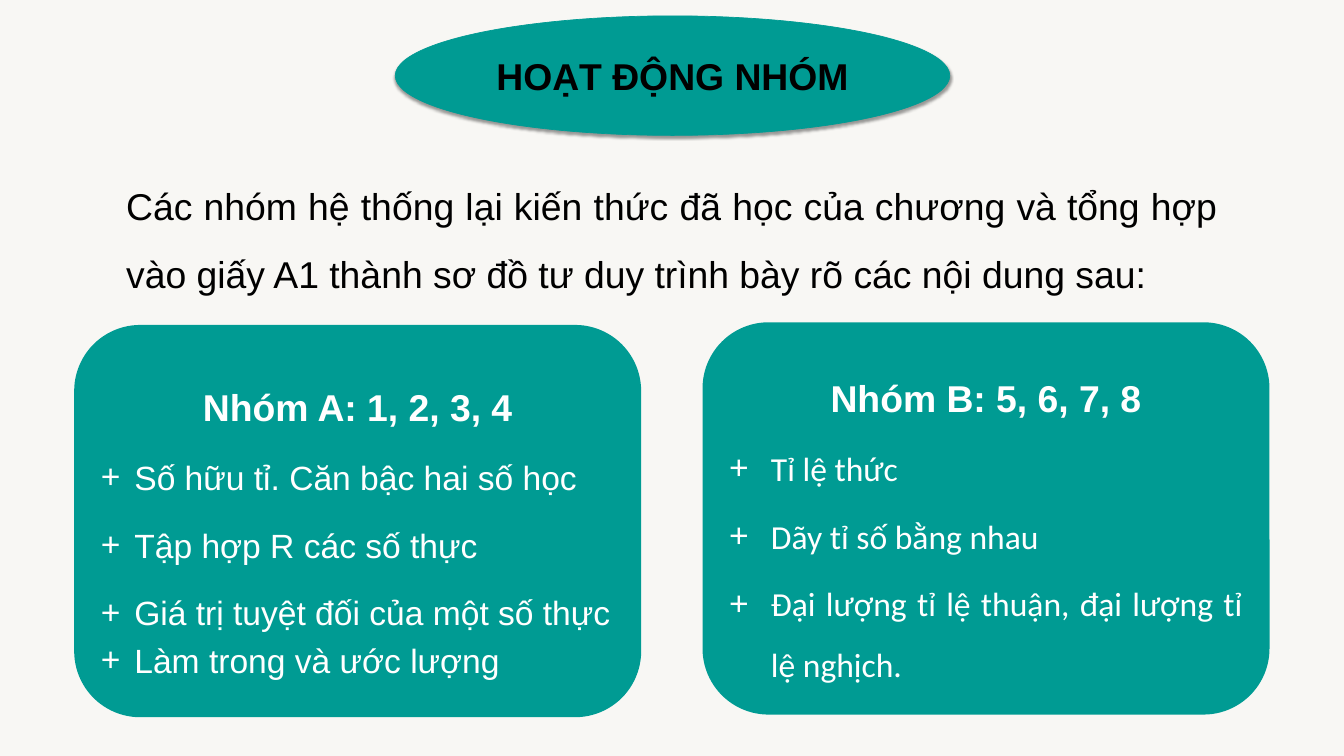
from lxml.etree import SubElement
from pptx import Presentation
from pptx.dml.color import RGBColor
from pptx.enum.shapes import MSO_SHAPE
from pptx.enum.text import MSO_ANCHOR, MSO_AUTO_SIZE, PP_ALIGN
from pptx.oxml.ns import qn
from pptx.util import Cm, Pt

TEAL = "009B93"
BLACK = "000000"
WHITE = "FFFFFF"
PAPER = "F8F7F4"


def color(value):
    """Turn a hex string into a colour."""
    return RGBColor.from_string(value)


def add_panel(page, kind, box, line_width):
    """Add a teal shape with middle-anchored text."""
    panel = page.shapes.add_shape(kind, *[Cm(length) for length in box])
    panel.shadow.inherit = False
    panel.fill.solid()
    panel.fill.fore_color.rgb = color(TEAL)
    panel.line.color.rgb = color(TEAL)
    panel.line.width = Pt(line_width)
    panel.text_frame.word_wrap = True
    panel.text_frame.vertical_anchor = MSO_ANCHOR.MIDDLE
    return panel


def add_shadow(shape):
    """Give a shape a soft shadow straight below it."""
    effects = shape._element.spPr.find(qn("a:effectLst"))
    shadow = SubElement(effects, qn("a:outerShdw"), blurRad="40000",
                        dist="20000", dir="5400000", rotWithShape="0")
    shade = SubElement(shadow, qn("a:srgbClr"), val=BLACK)
    SubElement(shade, qn("a:alpha"), val="38000")


def write(para, text, size, ink, align, font="Arial", bold=False):
    """Fill a paragraph with text in one style."""
    para.text = text
    para.alignment = align
    para.font.name = font
    para.font.size = Pt(size)
    para.font.bold = bold
    para.font.color.rgb = color(ink)


def space_out(para, after):
    """Set one-and-a-half line spacing and the gap below."""
    para.line_spacing = 1.5
    para.space_after = Pt(after)


def add_plus(para, indent):
    """Give a paragraph a hanging plus sign."""
    props = para._p.get_or_add_pPr()
    props.set("marL", str(Cm(indent)))
    props.set("indent", str(-Cm(indent)))
    SubElement(props, qn("a:buFont"), typeface="Arial")
    SubElement(props, qn("a:buChar"), char="+")


def add_title(page, box):
    """Place the title ellipse."""
    title = add_panel(page, MSO_SHAPE.OVAL, box, 0.75)
    add_shadow(title)
    write(title.text_frame.paragraphs[0], "HOẠT ĐỘNG NHÓM", 40, BLACK,
          PP_ALIGN.CENTER, bold=True)


def add_task(page, box, text):
    """Place the task sentence."""
    frame = page.shapes.add_textbox(*[Cm(length) for length in box]).text_frame
    frame.word_wrap = True
    frame.auto_size = MSO_AUTO_SIZE.SHAPE_TO_FIT_TEXT
    para = frame.paragraphs[0]
    space_out(para, 0)
    write(para, text, 40, BLACK, PP_ALIGN.JUSTIFY)


def add_group(page, box, heading, topics, font, indent, closing=None):
    """Place a group card: heading, spaced topics and a tight closing topic."""
    frame = add_panel(page, MSO_SHAPE.ROUNDED_RECTANGLE, box, 2).text_frame
    para = frame.paragraphs[0]
    space_out(para, 8)
    write(para, heading, 40, WHITE, PP_ALIGN.CENTER, bold=True)
    for topic in topics:
        para = frame.add_paragraph()
        space_out(para, 8)
        add_plus(para, indent)
        write(para, topic, 36, WHITE, PP_ALIGN.JUSTIFY, font)
    if closing:
        para = frame.add_paragraph()
        add_plus(para, indent)
        write(para, closing, 36, WHITE, PP_ALIGN.LEFT, font)


def main():
    """Build and save the slide."""
    deck = Presentation()
    deck.slide_width, deck.slide_height = Cm(50.8), Cm(28.58)
    page = deck.slides.add_slide(deck.slide_layouts[6])
    page.background.fill.solid()
    page.background.fill.fore_color.rgb = color(PAPER)

    add_title(page, (14.94, 0.6, 20.96, 4.52))
    add_task(page, (4.52, 5.97, 41.73, 5.08),
             "Các nhóm hệ thống lại kiến thức đã học của chương và tổng hợp "
             "vào giấy A1 thành sơ đồ tư duy trình bày rõ các nội dung sau:")
    add_group(page, (2.84, 12.32, 21.36, 14.76), "Nhóm A: 1, 2, 3, 4",
              ["Số hữu tỉ. Căn bậc hai số học", "Tập hợp R các số thực",
               "Giá trị tuyệt đối của một số thực"],
              "Arial", 1.27, "Làm trong và ước lượng")
    add_group(page, (26.59, 12.22, 21.36, 14.76), "Nhóm B: 5, 6, 7, 8",
              ["Tỉ lệ thức", "Dãy tỉ số bằng nhau",
               "Đại lượng tỉ lệ thuận, đại lượng tỉ lệ nghịch."],
              "Calibri", 1.58)
    deck.save("out.pptx")


if __name__ == "__main__":
    main()
